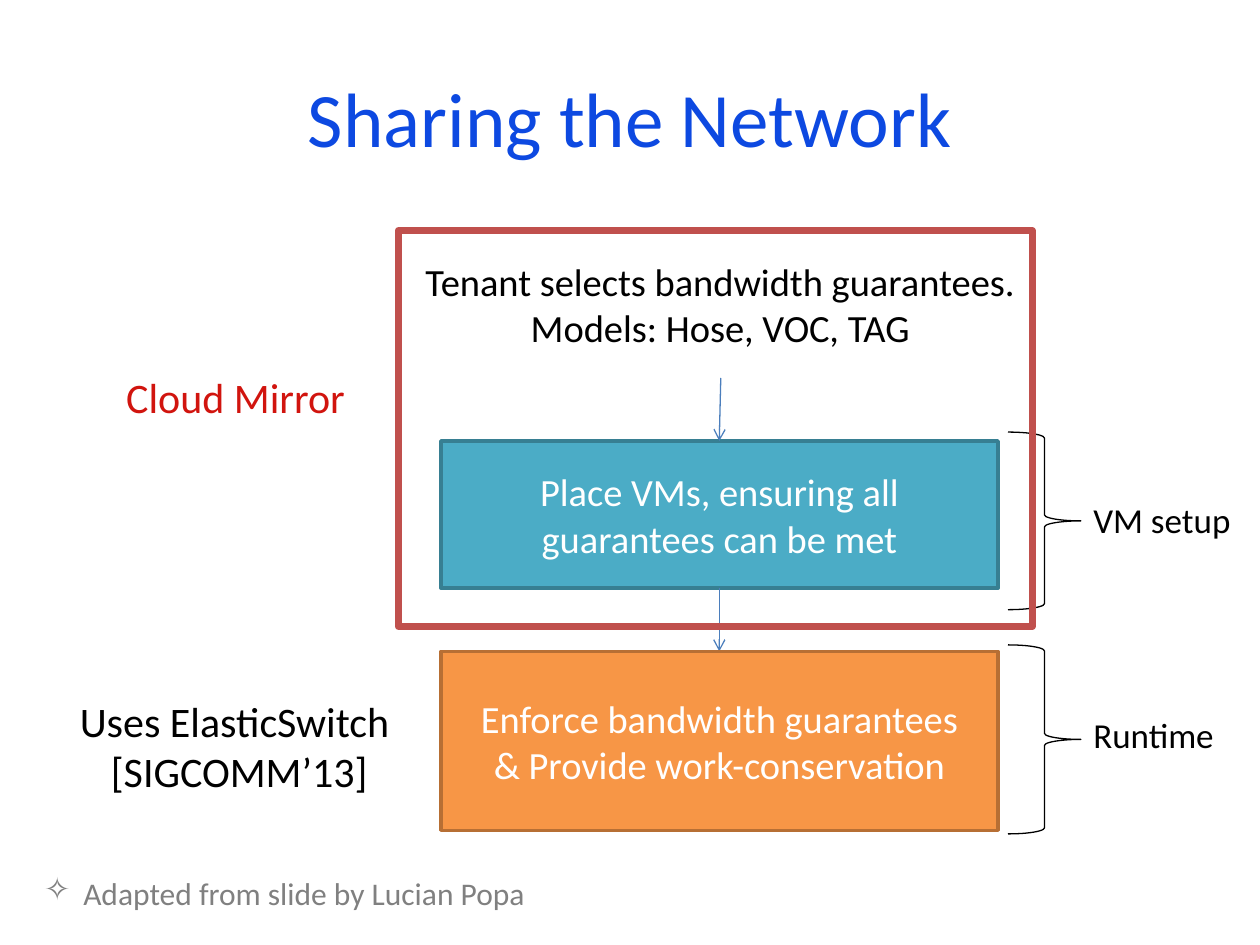
"""Builds the "Sharing the Network" slide."""
import dataclasses
import typing

import lxml.etree
import pptx
import pptx.dml.color
import pptx.enum.shapes
import pptx.enum.text
import pptx.oxml.ns
import pptx.util

Cm = pptx.util.Cm
Pt = pptx.util.Pt
SHAPE = pptx.enum.shapes.MSO_SHAPE
ALIGN = pptx.enum.text.PP_ALIGN
ANCHOR = pptx.enum.text.MSO_ANCHOR
COLORS = {
    "title": "0D49E1", "black": "000000", "white": "FFFFFF", "red": "D1140E",
    "gray": "808080", "teal": "4BACC6", "teal edge": "377F92",
    "orange": "F79646", "orange edge": "B76F34", "arrow": "4B7EBC",
    "frame": "C0504D",
}
AXIS = 14.5


@dataclasses.dataclass
class Area:
    left: float
    top: float
    width: float
    height: float

    def lengths(self) -> list:
        return [Cm(side) for side in dataclasses.astuple(self)]


@dataclasses.dataclass
class Label:
    lines: list[str]
    size: float
    color: str = "black"
    align: typing.Any = ALIGN.CENTER
    anchor: typing.Any = ANCHOR.TOP


@dataclasses.dataclass
class Block:
    area: Area
    kind: typing.Any
    edge: str
    weight: float
    fill: str | None = None
    label: Label | None = None
    rotation: float = 0


@dataclasses.dataclass
class Arrow:
    start: tuple[float, float]
    end: tuple[float, float]


STEP = {"size": 22, "color": "white", "anchor": ANCHOR.MIDDLE}
PHASE = {"size": 20, "align": ALIGN.LEFT}
BRACE = {"kind": SHAPE.LEFT_BRACE, "edge": "black", "weight": 0.75, "rotation": 180}
TITLE = (Area(1.27, 0.76, 22.86, 3.18),
         Label(["Sharing the Network"], 44, "title", anchor=ANCHOR.MIDDLE))
CREDIT = (Area(0.64, 17.5, 23.5, 1.02),
          Label(["Adapted from slide by Lucian Popa"], 18, "gray", ALIGN.LEFT))
ITEMS = [
    (Area(7.8, 4.65, 13.44, 2.97),
     Label(["Tenant selects bandwidth guarantees. Models: Hose, VOC, TAG"], 22,
           anchor=ANCHOR.MIDDLE)),
    Block(Area(8.89, 8.89, 11.23, 2.97), SHAPE.RECTANGLE, "teal edge", 2, "teal",
          Label(["Place VMs, ensuring all guarantees can be met"], **STEP)),
    Arrow((AXIS + 0.03, 7.62), (AXIS, 8.89)),
    Arrow((AXIS, 11.86), (AXIS, 13.13)),
    Block(Area(8.89, 13.13, 11.23, 3.61), SHAPE.RECTANGLE, "orange edge", 2, "orange",
          Label(["Enforce bandwidth guarantees", "& Provide work-conservation"], **STEP)),
    Block(Area(20.32, 8.71, 1.47, 3.58), **BRACE),
    (Area(21.79, 9.93, 3.61, 1.12), Label(["VM setup"], **PHASE)),
    Block(Area(20.32, 13, 1.47, 3.81), **BRACE),
    (Area(21.79, 14.25, 3.61, 1.12), Label(["Runtime"], **PHASE)),
    Block(Area(8.03, 4.65, 12.78, 7.98), SHAPE.RECTANGLE, "frame", 4),
    (Area(1.7, 7.37, 6.1, 1.27), Label(["Cloud Mirror"], 24, "red")),
    (Area(1.27, 13.89, 7.11, 2.31),
     Label(["Uses ElasticSwitch ", "[SIGCOMM’13]"], 24)),
]


def rgb(name: str) -> pptx.dml.color.RGBColor:
    """Look up a named colour."""
    return pptx.dml.color.RGBColor.from_string(COLORS[name])


def add_element(parent, tag: str, **values: str) -> None:
    """Append a drawing element with its attributes."""
    lxml.etree.SubElement(parent, pptx.oxml.ns.qn(tag), values)


def write(frame, label: Label) -> None:
    """Fill a text frame with a label."""
    frame.word_wrap = True
    frame.vertical_anchor = label.anchor
    for index, line in enumerate(label.lines):
        para = frame.add_paragraph() if index else frame.paragraphs[0]
        para.alignment = label.align
        span = para.add_run()
        span.text = line
        for name, value in {"name": "Calibri", "size": Pt(label.size)}.items():
            setattr(span.font, name, value)
        span.font.color.rgb = rgb(label.color)


def draw_text(page, area: Area, label: Label):
    """Add a text box and return it."""
    box = page.shapes.add_textbox(*area.lengths())
    write(box.text_frame, label)
    return box


def draw_block(page, block: Block) -> None:
    """Add an outlined shape with optional fill and text."""
    box = page.shapes.add_shape(block.kind, *block.area.lengths())
    box.shadow.inherit = False
    box.rotation = block.rotation
    box.line.color.rgb = rgb(block.edge)
    box.line.width = Pt(block.weight)
    add_element(box.line._get_or_add_ln(), "a:round")
    if block.fill:
        box.fill.solid()
        box.fill.fore_color.rgb = rgb(block.fill)
    else:
        box.fill.background()
    if block.label:
        write(box.text_frame, block.label)


def draw_arrow(page, arrow: Arrow) -> None:
    """Add a straight connector with an open head."""
    ends = [Cm(value) for value in arrow.start + arrow.end]
    link = page.shapes.add_connector(pptx.enum.shapes.MSO_CONNECTOR.STRAIGHT, *ends)
    link.line.color.rgb = rgb("arrow")
    link.line.width = Pt(0.75)
    add_element(link.line._get_or_add_ln(), "a:tailEnd", type="arrow")
    add_element(link._element.spPr, "a:effectLst")


def draw_title(page, area: Area, label: Label) -> None:
    """Place and fill the title placeholder."""
    title = page.shapes.title
    for name, value in zip(("left", "top", "width", "height"), area.lengths()):
        setattr(title, name, value)
    write(title.text_frame, label)


def draw_credit(page, area: Area, label: Label) -> None:
    """Add the bulleted source line."""
    box = draw_text(page, area, label)
    properties = box.text_frame.paragraphs[0]._p.get_or_add_pPr()
    for name, value in {"marL": Cm(0.79), "indent": Cm(-0.79)}.items():
        properties.set(name, str(int(value)))
    add_element(properties, "a:buChar", char="✧")


def main() -> None:
    """Build and save the deck."""
    deck = pptx.Presentation()
    deck.slide_width, deck.slide_height = Cm(25.4), Cm(19.05)
    page = deck.slides.add_slide(deck.slide_layouts[5])
    draw_title(page, *TITLE)
    for item in ITEMS:
        if isinstance(item, Block):
            draw_block(page, item)
        elif isinstance(item, Arrow):
            draw_arrow(page, item)
        else:
            draw_text(page, *item)
    draw_credit(page, *CREDIT)
    deck.save("out.pptx")


if __name__ == "__main__":
    main()
